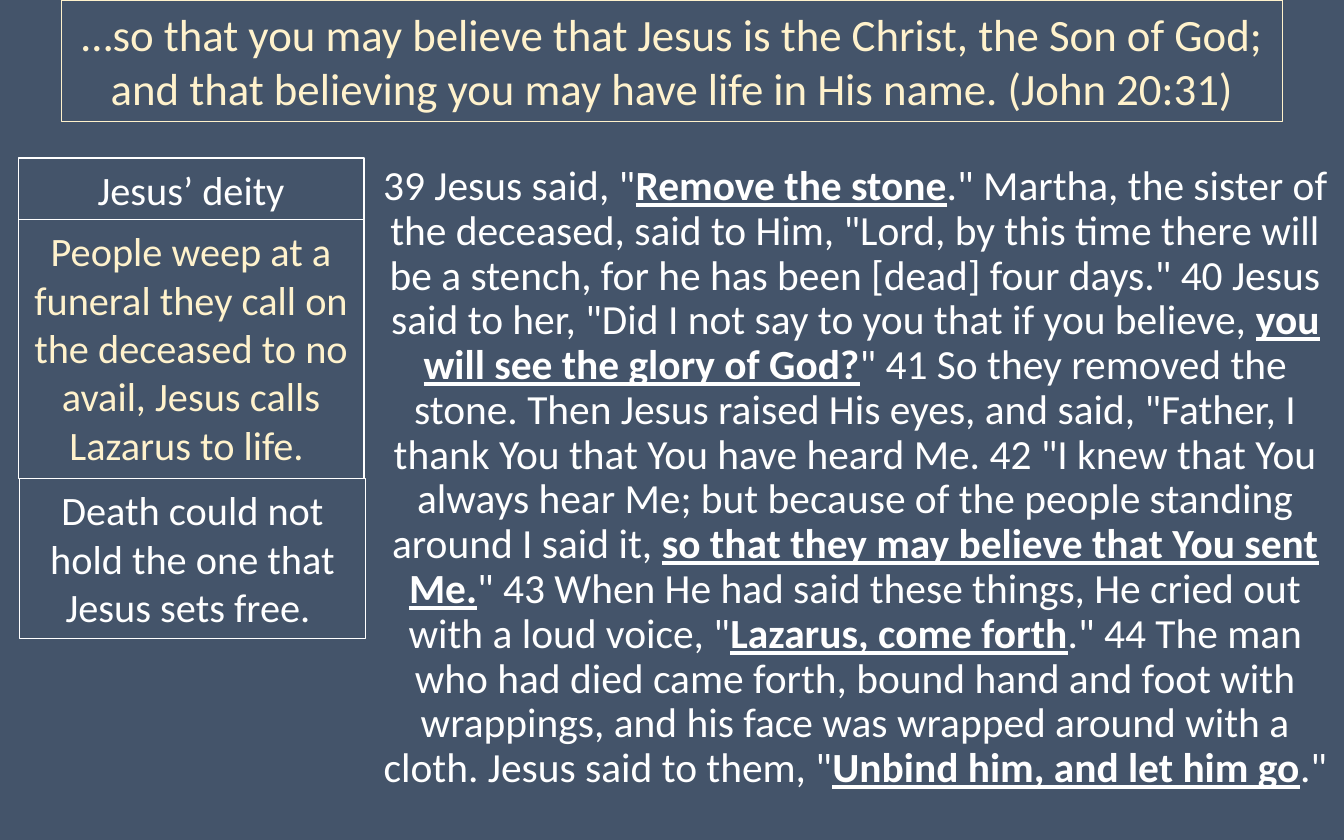
from pptx import Presentation
from pptx import util as u
from pptx.dml.color import RGBColor
from pptx.enum import shapes, text

PX = 9525  # EMU per px, 96 px to the inch
FONT = "Calibri"
COLORS = {"background": "44546A", "cream": "FFF2CC", "white": "FFFFFF"}

BANNER = ("…so that you may believe that Jesus is the Christ, the Son of God; "
          "and that believing you may have life in His name. (John 20:31)")

# left, height, colour, wording; the cards are stacked without gaps
CARDS_TOP, CARD_WIDTH = 113, 247
CARDS = [
    (13, 44, "white", "Jesus’ deity"),
    (13, 185, "cream", "People weep at a funeral they call on the deceased "
                       "to no avail, Jesus calls Lazarus to life. "),
    (14, 114, "white", "Death could not hold the one that Jesus sets free. "),
]

# Plain and emphasised passages alternate, starting with a plain one
SCRIPTURE = [
    '39 Jesus said, "',
    "Remove the stone",
    '." Martha, the sister of the deceased, said to Him, "Lord, by this time '
    'there will be a stench, for he has been [dead] four days." 40 Jesus said '
    'to her, "Did I not say to you that if you believe, ',
    "you will see the glory of God?",
    '" 41 So they removed the stone. Then Jesus raised His eyes, and said, '
    '"Father, I thank You that You have heard Me. 42 "I knew that You always '
    'hear Me; but because of the people standing around I said it, ',
    "so that they may believe that You sent Me.",
    '" 43 When He had said these things, He cried out with a loud voice, "',
    "Lazarus, come forth",
    '." 44 The man who had died came forth, bound hand and foot with '
    'wrappings, and his face was wrapped around with a cloth. Jesus said to '
    'them, "',
    "Unbind him, and let him go",
    '." ',
]


def px(*lengths):
    return [length * PX for length in lengths]


def rgb(name):
    return RGBColor.from_string(COLORS[name])


def format_run(run, size, color, emphasis=False):
    run.font.name = FONT
    run.font.size = u.Pt(size)
    run.font.color.rgb = rgb(color)
    run.font.bold = run.font.underline = emphasis


def add_framed_text(slide, box, wording, size, color, outline,
                    anchor=text.MSO_ANCHOR.TOP):
    shape = slide.shapes.add_shape(shapes.MSO_SHAPE.RECTANGLE, *px(*box))
    shape.shadow.inherit = False
    shape.fill.background()
    shape.line.color.rgb = rgb(outline)
    shape.line.width = u.Pt(0.75)
    frame = shape.text_frame
    frame.word_wrap = True
    frame.auto_size = text.MSO_AUTO_SIZE.SHAPE_TO_FIT_TEXT
    frame.vertical_anchor = anchor
    frame.text = wording
    paragraph = frame.paragraphs[0]
    paragraph.alignment = text.PP_ALIGN.CENTER
    format_run(paragraph.runs[0], size, color)


def add_scripture(slide, box, passages):
    frame = slide.shapes.add_textbox(*px(*box)).text_frame
    frame.word_wrap = True
    paragraph = frame.paragraphs[0]
    paragraph.alignment = text.PP_ALIGN.CENTER
    paragraph.line_spacing = 0.9
    paragraph.space_before = u.Pt(7.5)
    for index, passage in enumerate(passages):
        run = paragraph.add_run()
        run.text = passage
        format_run(run, 22.2, "white", emphasis=index % 2 == 1)


def add_cards(slide):
    top = CARDS_TOP
    for left, height, color, wording in CARDS:
        add_framed_text(slide, (left, top, CARD_WIDTH, height), wording,
                        21.6, color, "white")
        top += height


def main():
    presentation = Presentation()
    presentation.slide_width, presentation.slide_height = px(960, 600)
    slide = presentation.slides.add_slide(presentation.slide_layouts[6])
    slide.background.fill.solid()
    slide.background.fill.fore_color.rgb = rgb("background")

    add_scripture(slide, (262, 113, 698, 487), SCRIPTURE)
    add_framed_text(slide, (44, 0, 872, 87), BANNER, 24, "cream", "cream",
                    text.MSO_ANCHOR.MIDDLE)
    add_cards(slide)
    presentation.save("out.pptx")


if __name__ == "__main__":
    main()
